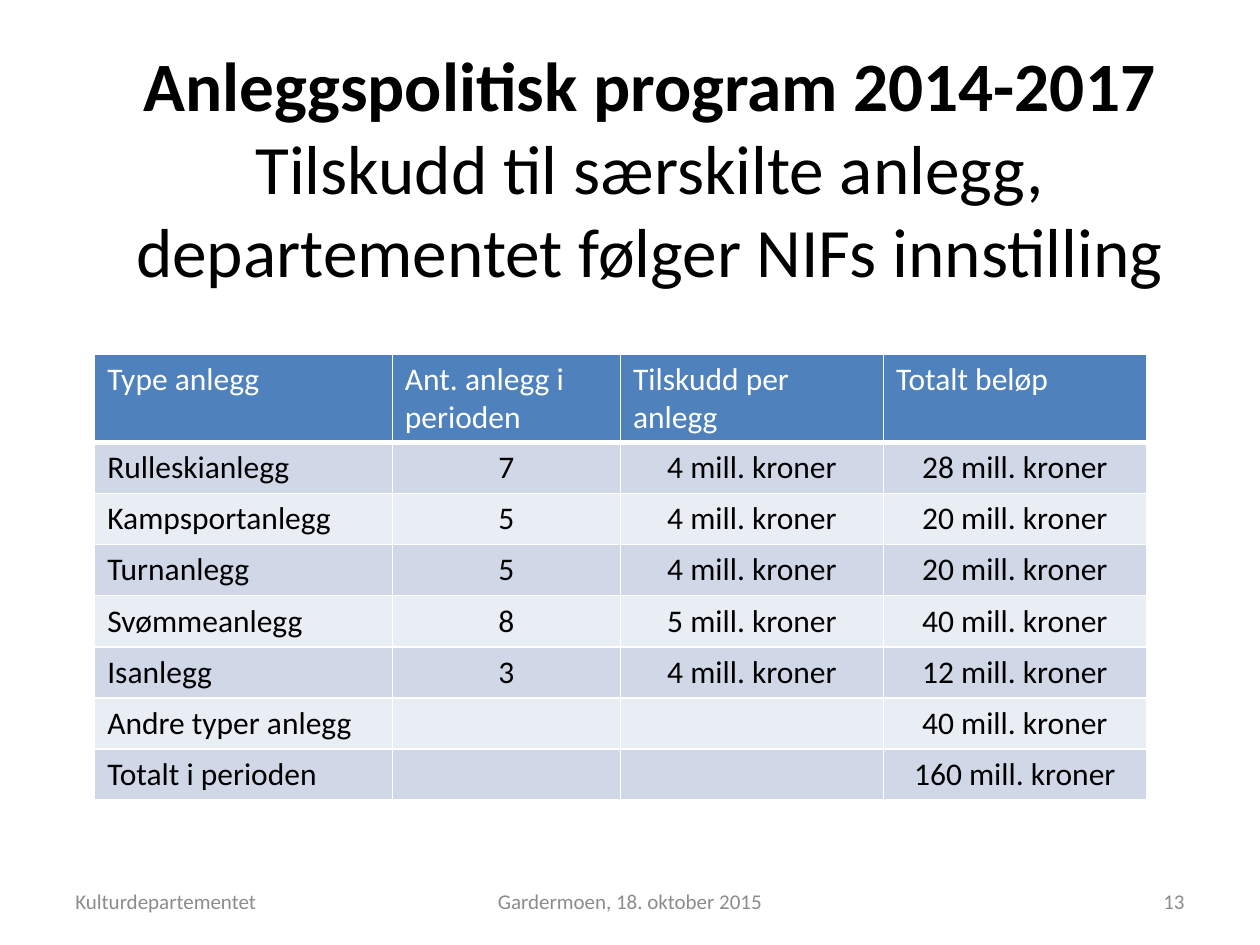
from pptx import Presentation
from pptx.dml.color import RGBColor
from pptx.enum.text import MSO_ANCHOR as Anchor, PP_ALIGN as Align
from pptx.oxml.ns import qn
from pptx.util import Cm, Pt
from lxml.etree import SubElement

COLORS = {
    "text": "000000",
    "footer": "8C8C8C",
    "white": "FFFFFF",
    "header": "4F81BD",
    "band_dark": "D0D8E8",
    "band_light": "E9EDF4",
}

HEADINGS = ("Type anlegg", "Ant. anlegg i perioden", "Tilskudd per anlegg", "Totalt beløp")
FACILITIES = [
    ("Rulleskianlegg", "7", "4 mill. kroner", "28 mill. kroner"),
    ("Kampsportanlegg", "5", "4 mill. kroner", "20 mill. kroner"),
    ("Turnanlegg", "5", "4 mill. kroner", "20 mill. kroner"),
    ("Svømmeanlegg", "8", "5 mill. kroner", "40 mill. kroner"),
    ("Isanlegg", "3", "4 mill. kroner", "12 mill. kroner"),
    ("Andre typer anlegg", "", "", "40 mill. kroner"),
    ("Totalt i perioden", "", "", "160 mill. kroner"),
]
COLUMN_WIDTHS = (6, 4.6, 5.3, 5.3)
ROW_HEIGHT = 1.03


def rgb(name):
    return RGBColor.from_string(COLORS[name])


def add_span(para, text, size, color, bold=False):
    span = para.add_run()
    span.text = text
    for name, value in {"name": "Calibri", "size": Pt(size), "bold": bold}.items():
        setattr(span.font, name, value)
    span.font.color.rgb = rgb(color)


def add_box(page, left, top, width, height, align):
    """Add a wrapped, vertically centred text box and return its paragraph."""
    box = page.shapes.add_textbox(Cm(left), Cm(top), Cm(width), Cm(height))
    frame = box.text_frame
    for name, value in {"word_wrap": True, "vertical_anchor": Anchor.MIDDLE}.items():
        setattr(frame, name, value)
    para = frame.paragraphs[0]
    para.alignment = align
    return para


def add_title(page):
    para = add_box(page, 1.3, 0.91, 23.6, 4.9, Align.CENTER)
    add_span(para, "Anleggspolitisk program 2014-2017", 39.6, "text", bold=True)
    para.add_line_break()
    add_span(para, "Tilskudd til særskilte anlegg, departementet følger NIFs innstilling",
             39.6, "text")


def set_borders(cell, bottom):
    """Draw white cell edges, with the bottom width given in points."""
    properties = cell._tc.get_or_add_tcPr()
    for side, width in {"L": 1, "R": 1, "T": 1, "B": bottom}.items():
        line = SubElement(properties, qn(f"a:ln{side}"), w=str(Pt(width)))
        fill = SubElement(line, qn("a:solidFill"))
        SubElement(fill, qn("a:srgbClr"), val=COLORS["white"])


def fill_cell(cell, text, fill, color, align, bottom=1):
    set_borders(cell, bottom)
    cell.fill.solid()
    cell.fill.fore_color.rgb = rgb(fill)
    para = cell.text_frame.paragraphs[0]
    para.alignment = align
    if text:
        add_span(para, text, 18, color)


def add_facility_table(page):
    row_count = len(FACILITIES) + 1
    table = page.shapes.add_table(
        row_count, len(HEADINGS), Cm(1.91), Cm(7.14),
        Cm(sum(COLUMN_WIDTHS)), Cm(ROW_HEIGHT * row_count)).table
    for column, width in zip(table.columns, COLUMN_WIDTHS):
        column.width = Cm(width)
    for row in table.rows:
        row.height = Cm(ROW_HEIGHT)

    # Header row
    for col, heading in enumerate(HEADINGS):
        fill_cell(table.cell(0, col), heading, "header", "white", Align.LEFT, bottom=3)

    # Banded body rows
    for row, values in enumerate(FACILITIES, start=1):
        band = "band_dark" if row % 2 else "band_light"
        for col, value in enumerate(values):
            align = Align.CENTER if col else Align.LEFT
            fill_cell(table.cell(row, col), value, band, "text", align)


def add_footer(page):
    for text, left, width, align in (
        ("Kulturdepartementet", 1.27, 5.93, Align.LEFT),
        ("Gardermoen, 18. oktober 2015", 8.68, 8.04, Align.CENTER),
        ("13", 18.2, 5.93, Align.RIGHT),
    ):
        add_span(add_box(page, left, 17.66, width, 1.01, align), text, 12, "footer")


def main():
    deck = Presentation()
    deck.slide_width, deck.slide_height = Cm(25.4), Cm(19.05)
    page = deck.slides.add_slide(deck.slide_layouts[6])
    add_title(page)
    add_facility_table(page)
    add_footer(page)
    deck.save("out.pptx")


if __name__ == "__main__":
    main()
